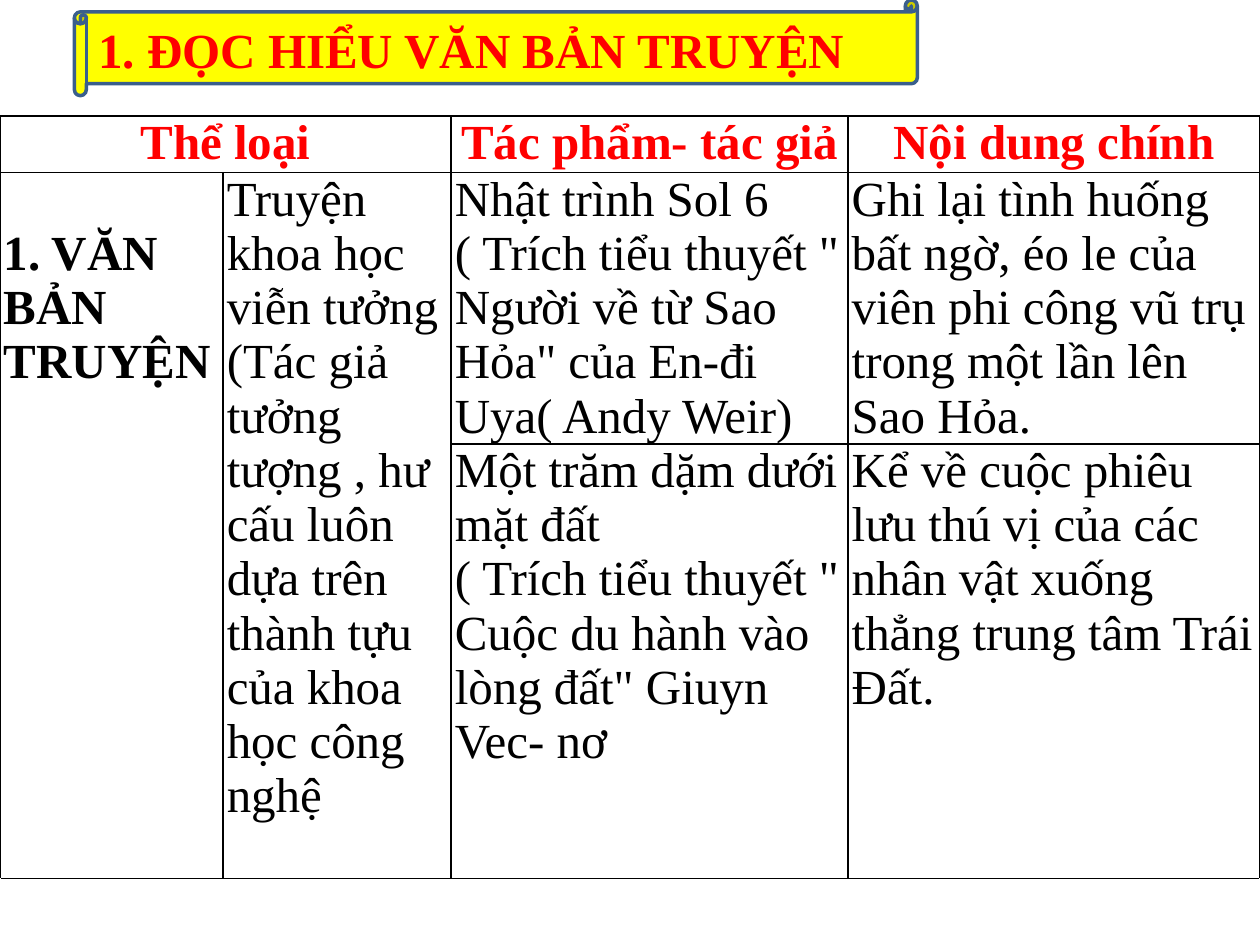
from dataclasses import dataclass

from lxml.etree import SubElement
from pptx import Presentation
from pptx.dml.color import RGBColor
from pptx.enum.shapes import MSO_SHAPE
from pptx.enum.text import MSO_ANCHOR, MSO_AUTO_SIZE, PP_ALIGN
from pptx.oxml.ns import qn
from pptx.util import Inches, Pt

FONT = "Times New Roman"
RED, BLACK, WHITE, YELLOW, BLUE = "FF0000", "000000", "FFFFFF", "FFFF00", "3A5F8C"
COLUMN_WIDTHS = (1.77, 1.81, 3.15, 3.27)
ROW_HEIGHTS = (0.45, 2.15, 3.45, 0.39)
LAST_ROW = len(ROW_HEIGHTS) - 1


@dataclass(frozen=True)
class Entry:
    row: int
    column: int
    paragraphs: tuple[str, ...]
    row_span: int = 1
    column_span: int = 1
    color: str = BLACK
    bold: bool = False
    align: PP_ALIGN = PP_ALIGN.LEFT
    top_margin: float = 0


def heading(column: int, wording: str, column_span: int = 1) -> Entry:
    return Entry(0, column, (wording,), column_span=column_span,
                 color=RED, bold=True, align=PP_ALIGN.CENTER)


ENTRIES = (
    heading(0, "Thể loại", column_span=2),
    heading(2, "Tác phẩm- tác giả"),
    heading(3, "Nội dung chính"),
    Entry(1, 0, ("1. VĂN BẢN", "TRUYỆN"), row_span=2, bold=True, top_margin=0.43),
    Entry(1, 1, (
        "Truyện khoa học viễn tưởng",
        "(Tác giả tưởng tượng , hư cấu luôn dựa trên thành tựu của khoa học công nghệ",
    ), row_span=2),
    Entry(1, 2, (
        "Nhật trình Sol 6",
        "( Trích tiểu thuyết \" Người về từ Sao Hỏa\" của En-đi Uya( Andy Weir)",
    )),
    Entry(1, 3, (
        "Ghi lại tình huống bất ngờ, éo le của viên phi công vũ trụ trong một lần lên Sao Hỏa.",
    )),
    Entry(2, 2, (
        "Một trăm dặm dưới mặt đất",
        "( Trích tiểu thuyết \" Cuộc du hành vào lòng đất\" Giuyn Vec- nơ",
    )),
    Entry(2, 3, (
        "Kể về cuộc phiêu lưu thú vị của các nhân vật xuống thẳng trung tâm Trái Đất.",
    )),
)


def rgb(value: str) -> RGBColor:
    return RGBColor.from_string(value)


def write(text_frame, paragraphs: tuple[str, ...], color: str, bold: bool, align: PP_ALIGN) -> None:
    text_frame.text = "\n".join(paragraphs)
    for paragraph in text_frame.paragraphs:
        paragraph.alignment = align
        for run in paragraph.runs:
            run.font.name = FONT
            run.font.size = Pt(28)
            run.font.bold = bold
            run.font.color.rgb = rgb(color)


def draw_border(cell, side: str) -> None:
    properties = cell._tc.get_or_add_tcPr()
    border = SubElement(properties, qn(f"a:ln{side}"), w=str(Pt(1)))
    fill = SubElement(border, qn("a:solidFill"))
    SubElement(fill, qn("a:srgbClr"), val=BLACK)


def draw_title(slide) -> None:
    scroll = slide.shapes.add_shape(
        MSO_SHAPE.HORIZONTAL_SCROLL, Inches(0.59), Inches(0), Inches(6.69), Inches(0.76))
    scroll.shadow.inherit = False
    scroll.fill.solid()
    scroll.fill.fore_color.rgb = rgb(YELLOW)
    scroll.line.color.rgb = rgb(BLUE)
    scroll.line.width = Pt(2)

    title = slide.shapes.title
    title.left, title.top = Inches(0.68), Inches(0.1)
    title.width, title.height = Inches(6.5), Inches(0.57)
    slide.shapes._spTree.append(title._element)
    write(title.text_frame, ("1. ĐỌC HIỂU VĂN BẢN TRUYỆN",), RED, True, PP_ALIGN.LEFT)
    title.text_frame.word_wrap = True
    title.text_frame.auto_size = MSO_AUTO_SIZE.NONE
    title.text_frame.vertical_anchor = MSO_ANCHOR.MIDDLE


def draw_entry(table, entry: Entry) -> None:
    cell = table.cell(entry.row, entry.column)
    if entry.row_span > 1 or entry.column_span > 1:
        cell.merge(table.cell(entry.row + entry.row_span - 1,
                              entry.column + entry.column_span - 1))
    cell.margin_left = cell.margin_right = Inches(0.03)
    cell.margin_top, cell.margin_bottom = Inches(entry.top_margin), Inches(0)
    write(cell.text_frame, entry.paragraphs, entry.color, entry.bold, entry.align)


def draw_table(slide) -> None:
    table = slide.shapes.add_table(
        len(ROW_HEIGHTS), len(COLUMN_WIDTHS), Inches(0), Inches(0.92),
        Inches(sum(COLUMN_WIDTHS)), Inches(sum(ROW_HEIGHTS))).table
    table.first_row = table.horz_banding = False
    for column, width in zip(table.columns, COLUMN_WIDTHS):
        column.width = Inches(width)
    for index, (row, height) in enumerate(zip(table.rows, ROW_HEIGHTS)):
        row.height = Inches(height)
        for cell in row.cells:
            for side in "T" if index == LAST_ROW else "LRTB":
                draw_border(cell, side)
            cell.fill.solid()
            cell.fill.fore_color.rgb = rgb(WHITE)
    for entry in ENTRIES:
        draw_entry(table, entry)
    table.cell(LAST_ROW, 0).merge(table.cell(LAST_ROW, len(COLUMN_WIDTHS) - 1))


def main() -> None:
    presentation = Presentation()
    presentation.slide_width, presentation.slide_height = Inches(10), Inches(7.5)
    slide = presentation.slides.add_slide(presentation.slide_layouts[5])
    draw_title(slide)
    draw_table(slide)
    presentation.save("out.pptx")


if __name__ == "__main__":
    main()
